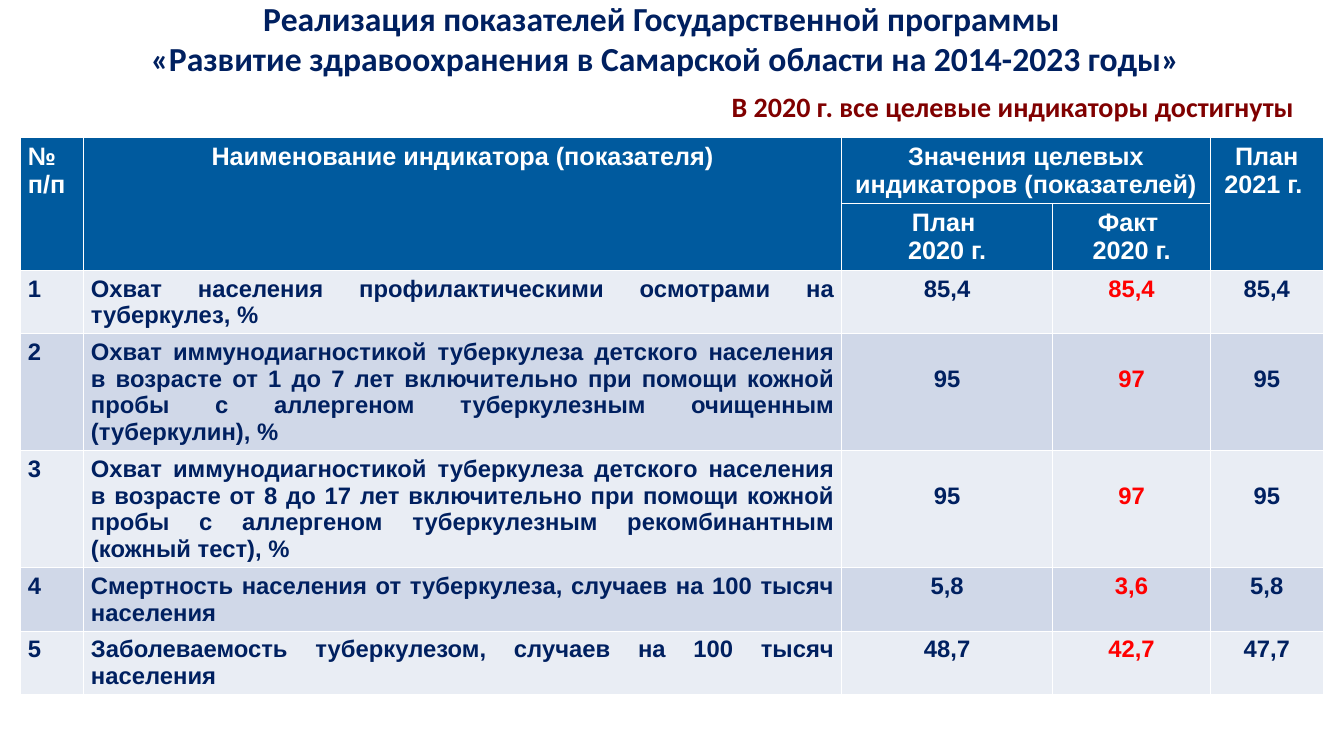
from lxml import etree
from pptx import Presentation
from pptx import util as u
from pptx.dml.color import RGBColor
from pptx.enum import text
from pptx.oxml import ns

Pt = u.Pt
AL = text.PP_ALIGN

THEME = dict(
    navy="002060", maroon="800000", red="FF0000", white="FFFFFF", header="005A9E",
    bands=("E9EDF4", "D0D8E8"), heading_font="Calibri", table_font="Arial",
    title=24, subtitle=20, head=18, body=17,
)

TITLE = ["Реализация показателей Государственной программы ",
         "«Развитие здравоохранения в Самарской области на 2014-2023 годы»"]
SUBTITLE = ["В 2020 г. все целевые индикаторы достигнуты"]

HEADERS = [
    ("№ п/п", 0, 0, 1, 0, AL.LEFT),
    ("Наименование индикатора (показателя)", 0, 1, 1, 1, AL.CENTER),
    ("Значения целевых индикаторов (показателей)", 0, 2, 0, 3, AL.CENTER),
    ("План 2021 г. ", 0, 4, 1, 4, AL.CENTER),
    ("План \n2020 г.", 1, 2, 1, 2, AL.CENTER),
    ("Факт \n2020 г.", 1, 3, 1, 3, AL.CENTER),
]

INDICATORS = [
    ("Охват населения профилактическими осмотрами на туберкулез, %",
     "85,4", "85,4", "85,4"),
    ("Охват иммунодиагностикой туберкулеза детского населения в возрасте от 1 до 7 лет "
     "включительно при помощи кожной пробы с аллергеном туберкулезным очищенным "
     "(туберкулин), %", "95", "97", "95"),
    ("Охват иммунодиагностикой туберкулеза детского населения в возрасте от 8 до 17 лет "
     "включительно при помощи кожной пробы с аллергеном туберкулезным рекомбинантным "
     "(кожный тест), %", "95", "97", "95"),
    ("Смертность населения от туберкулеза, случаев на 100 тысяч населения",
     "5,8", "3,6", "5,8"),
    ("Заболеваемость туберкулезом, случаев на 100 тысяч населения",
     "48,7", "42,7", "47,7"),
]

COLS = [45, 541.3, 151, 112.5, 80.7]
HEAD_H, SHORT_H, TALL_H = 47.3, 45, 83.5
TALL_TEXT = 100
PAD_X, PAD_Y, LINE = 5.2, 3.6, 19.2
ALIGNS = [AL.LEFT, AL.JUSTIFY] + [AL.CENTER] * 3
FACT_COL = 3


def write(tf, lines, font, size, color, align):
    tf.word_wrap = True
    for i, line in enumerate(lines):
        p = tf.paragraphs[0] if i == 0 else tf.add_paragraph()
        p.text, p.alignment = line, align
        p.font.name, p.font.size, p.font.bold = font, Pt(size), True
        p.font.color.rgb = RGBColor.from_string(color)


def heading(s, box, lines, size, color):
    tf = s.shapes.add_textbox(*map(Pt, box)).text_frame
    tf.vertical_anchor = text.MSO_ANCHOR.MIDDLE
    write(tf, lines, THEME["heading_font"], size, color, AL.CENTER)


def style_cell(cell, fill):
    tcPr = cell._tc.get_or_add_tcPr()
    for side in ("lnL", "lnR", "lnT", "lnB"):
        ln = etree.SubElement(tcPr, ns.qn("a:" + side), w=str(Pt(1)))
        solid = etree.SubElement(ln, ns.qn("a:solidFill"))
        etree.SubElement(solid, ns.qn("a:srgbClr"), val=THEME["white"])
    cell.fill.solid()
    cell.fill.fore_color.rgb = RGBColor.from_string(fill)
    cell.margin_left = cell.margin_right = Pt(PAD_X)
    cell.margin_top = cell.margin_bottom = Pt(PAD_Y)


def indicator_table(s):
    tall = [len(row[0]) > TALL_TEXT for row in INDICATORS]
    heights = [HEAD_H] * 2 + [TALL_H if t else SHORT_H for t in tall]
    frame = s.shapes.add_table(len(heights), len(COLS), Pt(14.8), Pt(98),
                               Pt(sum(COLS)), Pt(sum(heights)))
    table = frame.table
    table.first_row = table.horz_banding = False
    for col, w in zip(table.columns, COLS):
        col.width = Pt(w)
    for i, (row, h) in enumerate(zip(table.rows, heights)):
        row.height = Pt(h)
        for cell in row.cells:
            style_cell(cell, THEME["header"] if i < 2 else THEME["bands"][i % 2])

    for label, top, left, bottom, right, align in HEADERS:
        cell = table.cell(top, left)
        if (top, left) != (bottom, right):
            cell.merge(table.cell(bottom, right))
        write(cell.text_frame, label.split("\n"), THEME["table_font"],
              THEME["head"], THEME["white"], align)

    for i, row in enumerate(INDICATORS):
        for j, value in enumerate((str(i + 1), *row)):
            cell = table.cell(i + 2, j)
            color = THEME["red"] if j == FACT_COL else THEME["navy"]
            write(cell.text_frame, [value], THEME["table_font"],
                  THEME["body"], color, ALIGNS[j])
            if tall[i] and ALIGNS[j] == AL.CENTER:
                cell.margin_top = Pt(PAD_Y + LINE)


def main():
    prs = Presentation()
    prs.slide_width, prs.slide_height = Pt(960), Pt(540)
    s = prs.slides.add_slide(prs.slide_layouts[6])
    indicator_table(s)
    heading(s, (36.7, 0, 877, 54.7), TITLE, THEME["title"], THEME["navy"])
    heading(s, (501.8, 57.6, 443.5, 36), SUBTITLE, THEME["subtitle"], THEME["maroon"])
    prs.save("out.pptx")


if __name__ == "__main__":
    main()
